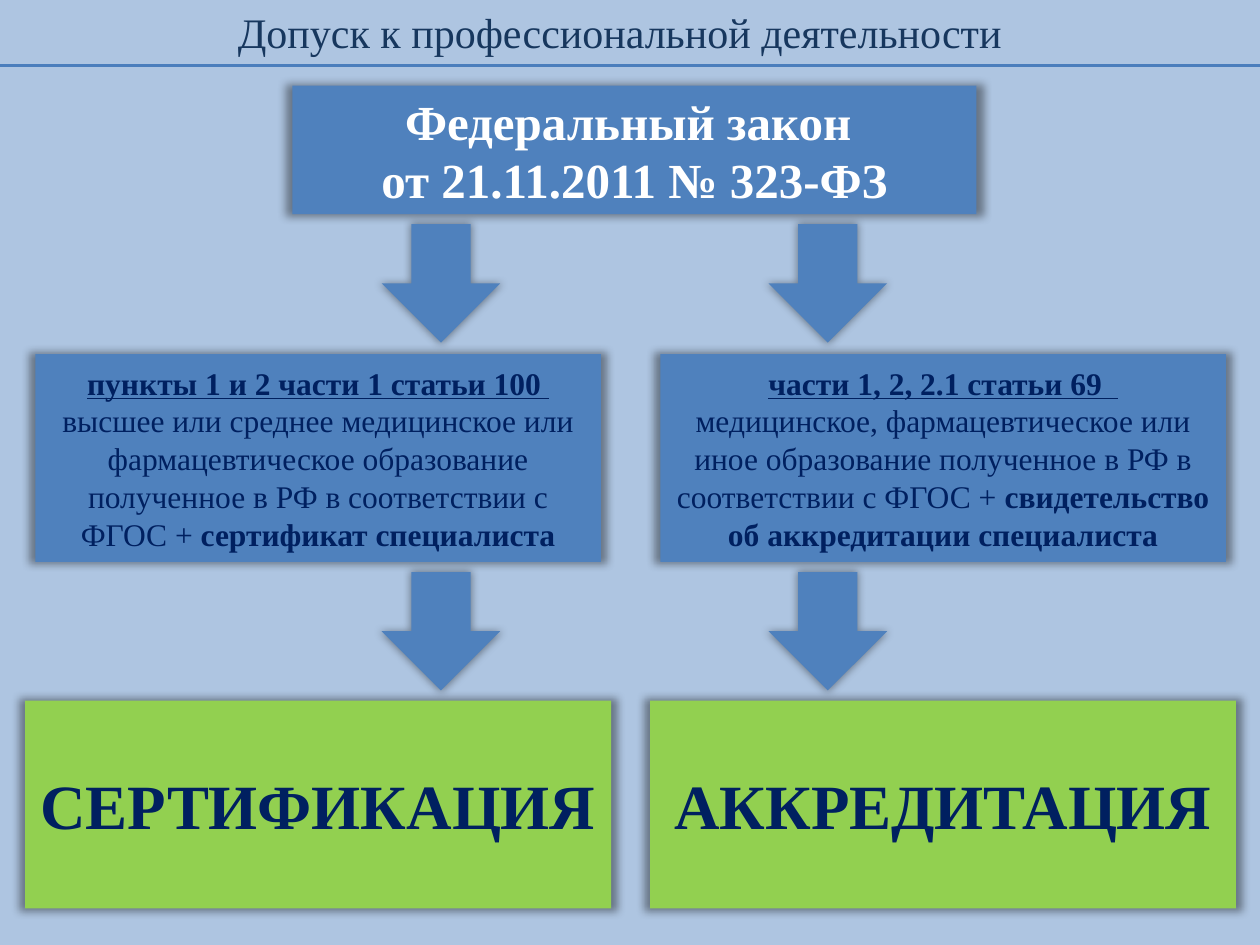
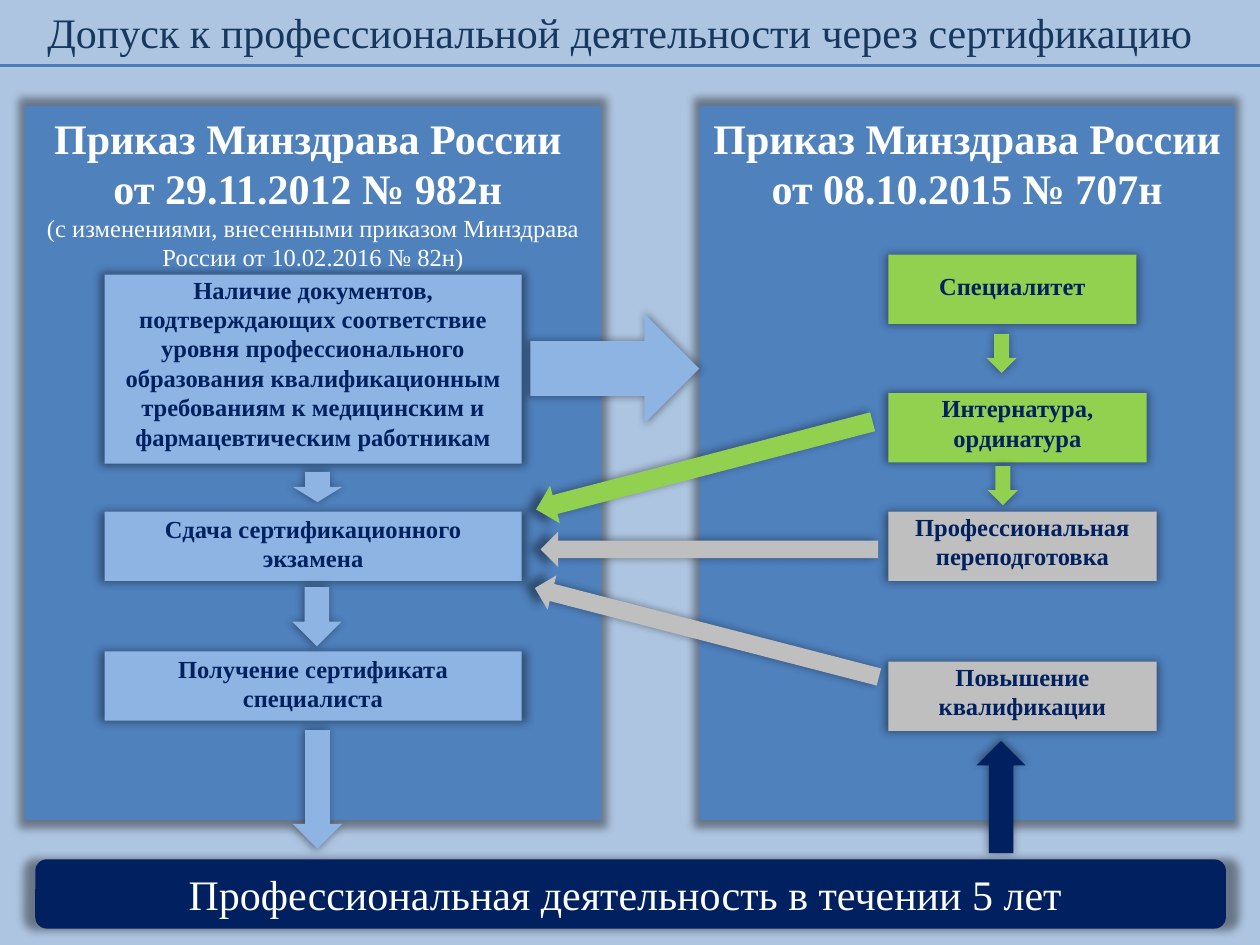
from dataclasses import dataclass
from lxml.etree import SubElement
from pptx import Presentation
from pptx.dml.color import RGBColor
from pptx.enum.shapes import MSO_CONNECTOR, MSO_SHAPE
from pptx.enum.text import MSO_ANCHOR, MSO_AUTO_SIZE, PP_ALIGN
from pptx.oxml.ns import qn
from pptx.util import Inches, Pt

FONT = "Times New Roman"
BACK = RGBColor(0xAE, 0xC5, 0xE1)
BLUE = RGBColor(0x4F, 0x81, 0xBD)
RULE = RGBColor(0x4B, 0x7E, 0xBC)
INK = RGBColor(0x17, 0x37, 0x5E)
NAVY = RGBColor(0x00, 0x20, 0x60)
SKY = RGBColor(0x8E, 0xB4, 0xE3)
GREEN = RGBColor(0x92, 0xD0, 0x50)
GRAY = RGBColor(0xBF, 0xBF, 0xBF)
WHITE = RGBColor(0xFF, 0xFF, 0xFF)

RECT, ROUND = MSO_SHAPE.RECTANGLE, MSO_SHAPE.ROUNDED_RECTANGLE
DOWN, RIGHT = MSO_SHAPE.DOWN_ARROW, MSO_SHAPE.RIGHT_ARROW


@dataclass
class Para:
    text: str
    size: int
    color: RGBColor = NAVY
    bold: bool = True
    under: bool = False
    tail: str = ""  # bold ending of a plain paragraph


# Content of slide 1
ACCESS = "Допуск к профессиональной деятельности"
LAW = ["Федеральный закон ", "от 21.11.2011 № 323-ФЗ"]
# left of clause box, left of result box, left of arrows, clause, terms, proof, result
PATHS = [
    (0.28, 0.2, 3.03, "пункты 1 и 2 части 1 статьи 100 ",
     "высшее или среднее медицинское или фармацевтическое образование "
     "полученное в РФ в соответствии с ФГОС + ",
     "сертификат специалиста", "СЕРТИФИКАЦИЯ"),
    (5.24, 5.16, 6.1, "части 1, 2, 2.1 статьи 69  ",
     "медицинское, фармацевтическое или иное образование полученное в РФ "
     "в соответствии с ФГОС + ",
     "свидетельство об аккредитации специалиста", "АККРЕДИТАЦИЯ"),
]

# Content of slide 2
ORDERS = [
    (0.2, 4.57, ["Приказ Минздрава России ", "от 29.11.2012 № 982н "],
     ["(с изменениями, внесенными приказом Минздрава России от 10.02.2016 № 82н)"]),
    (5.55, 4.25, ["Приказ Минздрава России ", "от 08.10.2015 № 707н"], []),
]
# left, top, width, height, fill, anchored at top, lines
STEPS = [
    (0.83, 2.18, 3.31, 1.5, SKY, True,
     ["Наличие документов, подтверждающих соответствие уровня профессионального "
      "образования квалификационным требованиям к медицинским и "
      "фармацевтическим работникам"]),
    (0.83, 4.06, 3.31, 0.55, SKY, False, ["Сдача сертификационного экзамена"]),
    (0.83, 5.17, 3.31, 0.55, SKY, False, ["Получение сертификата специалиста"]),
    (7.05, 2.02, 1.97, 0.55, GREEN, False, ["Специалитет"]),
    (7.05, 3.12, 2.05, 0.55, GREEN, True, ["Интернатура,", "ординатура"]),
    (7.05, 4.06, 2.13, 0.55, GRAY, True, ["Профессиональная переподготовка"]),
    (7.05, 5.25, 2.13, 0.55, GRAY, True, ["Повышение квалификации"]),
]
WORK = "Профессиональная деятельность в течении 5 лет "
# kind, left, top, width, height, fill, turn
ARROWS = [
    (RIGHT, 4.21, 2.49, 1.34, 0.87, SKY, 0),
    (DOWN, 7.83, 2.65, 0.24, 0.31, GREEN, 0),
    (DOWN, 7.84, 3.7, 0.24, 0.31, GREEN, 0),
    (RIGHT, 4.21, 3.54, 2.76, 0.31, GREEN, 165.4),
    (RIGHT, 4.29, 4.22, 2.68, 0.28, GRAY, 180),
    (RIGHT, 4.2, 4.88, 2.82, 0.28, GRAY, 194.5),
    (RIGHT, 2.4, 3.67, 0.24, 0.39, SKY, 90),
    (RIGHT, 2.28, 4.7, 0.47, 0.39, SKY, 90),
    (RIGHT, 2.05, 6.07, 0.94, 0.39, SKY, 90),
    (RIGHT, 7.5, 6.13, 0.89, 0.39, NAVY, 270),
]


def write(frame, paras):
    for i, para in enumerate(paras):
        line = frame.add_paragraph() if i else frame.paragraphs[0]
        line.alignment = PP_ALIGN.CENTER
        font = line.font
        font.name, font.size = FONT, Pt(para.size)
        font.color.rgb = para.color
        font.underline = para.under
        if para.tail:
            for text, bold in ((para.text, False), (para.tail, True)):
                run = line.add_run()
                run.text, run.font.bold = text, bold
        else:
            font.bold = para.bold
            line.add_run().text = para.text


def glow(shape):
    """Soft dark halo, slightly larger than the shape."""
    shape.shadow.inherit = False
    effects = shape._element.spPr.find(qn("a:effectLst"))
    halo = SubElement(effects, qn("a:outerShdw"), blurRad="63500", sx="102000",
                      sy="102000", algn="ctr", rotWithShape="0")
    tint = SubElement(halo, qn("a:srgbClr"), val="000000")
    SubElement(tint, qn("a:alpha"), val="40000")


def draw(slide, kind, at, fill, paras=(), top=False, tight=False, turn=0):
    shape = slide.shapes.add_shape(kind, *map(Inches, at))
    shape.fill.solid()
    shape.fill.fore_color.rgb = fill
    shape.line.fill.background()
    shape.rotation = turn
    glow(shape)
    frame = shape.text_frame
    frame.word_wrap = True
    frame.vertical_anchor = MSO_ANCHOR.TOP if top else MSO_ANCHOR.MIDDLE
    if tight:
        frame.margin_top = 0
    write(frame, paras)


def start(deck, title, left, width):
    """Slide with the shared background, title and rule."""
    slide = deck.slides.add_slide(deck.slide_layouts[6])
    slide.background.fill.solid()
    slide.background.fill.fore_color.rgb = BACK
    box = slide.shapes.add_textbox(Inches(left), 0, Inches(width), Inches(0.5))
    box.text_frame.word_wrap = False
    box.text_frame.auto_size = MSO_AUTO_SIZE.SHAPE_TO_FIT_TEXT
    write(box.text_frame, [Para(title, 24, INK, False)])
    rule = slide.shapes.add_connector(MSO_CONNECTOR.STRAIGHT, 0, Inches(0.52),
                                      Inches(10), Inches(0.52))
    rule.line.color.rgb = RULE
    rule.line.width = Pt(1.75)
    SubElement(rule._element.spPr, qn("a:effectLst"))
    return slide


def show_paths(deck):
    slide = start(deck, ACCESS, 1.77, 6.3)
    draw(slide, RECT, (2.32, 0.68, 5.43, 1.02), BLUE,
         [Para(text, 28, WHITE) for text in LAW])
    for left, end, mid, clause, terms, proof, result in PATHS:
        draw(slide, RECT, (left, 2.81, 4.49, 1.65), BLUE,
             [Para(clause, 18, under=True), Para(terms, 18, tail=proof)])
        draw(slide, RECT, (end, 5.56, 4.65, 1.65), GREEN, [Para(result, 36)])
        for top in (1.78, 4.54):
            draw(slide, DOWN, (mid, top, 0.94, 0.94), BLUE)


def show_steps(deck):
    slide = start(deck, ACCESS + " через сертификацию", 0.23, 9.38)
    # Order panels
    for left, width, heads, notes in ORDERS:
        draw(slide, RECT, (left, 0.84, width, 5.67), BLUE,
             [Para(text, 24, WHITE) for text in heads]
             + [Para(text, 14, WHITE, False) for text in notes], top=True)
    # Steps and the closing band
    for *at, fill, top, lines in STEPS:
        draw(slide, RECT, at, fill, [Para(text, 14) for text in lines], top, True)
    draw(slide, ROUND, (0.28, 6.82, 9.45, 0.55), NAVY,
         [Para(WORK, 24, WHITE, False)])
    # Arrows
    for kind, *at, fill, turn in ARROWS:
        draw(slide, kind, at, fill, turn=turn)


def main():
    deck = Presentation()
    deck.slide_width, deck.slide_height = Inches(10), Inches(7.5)
    show_paths(deck)
    show_steps(deck)
    deck.save("out.pptx")


if __name__ == "__main__":
    main()
